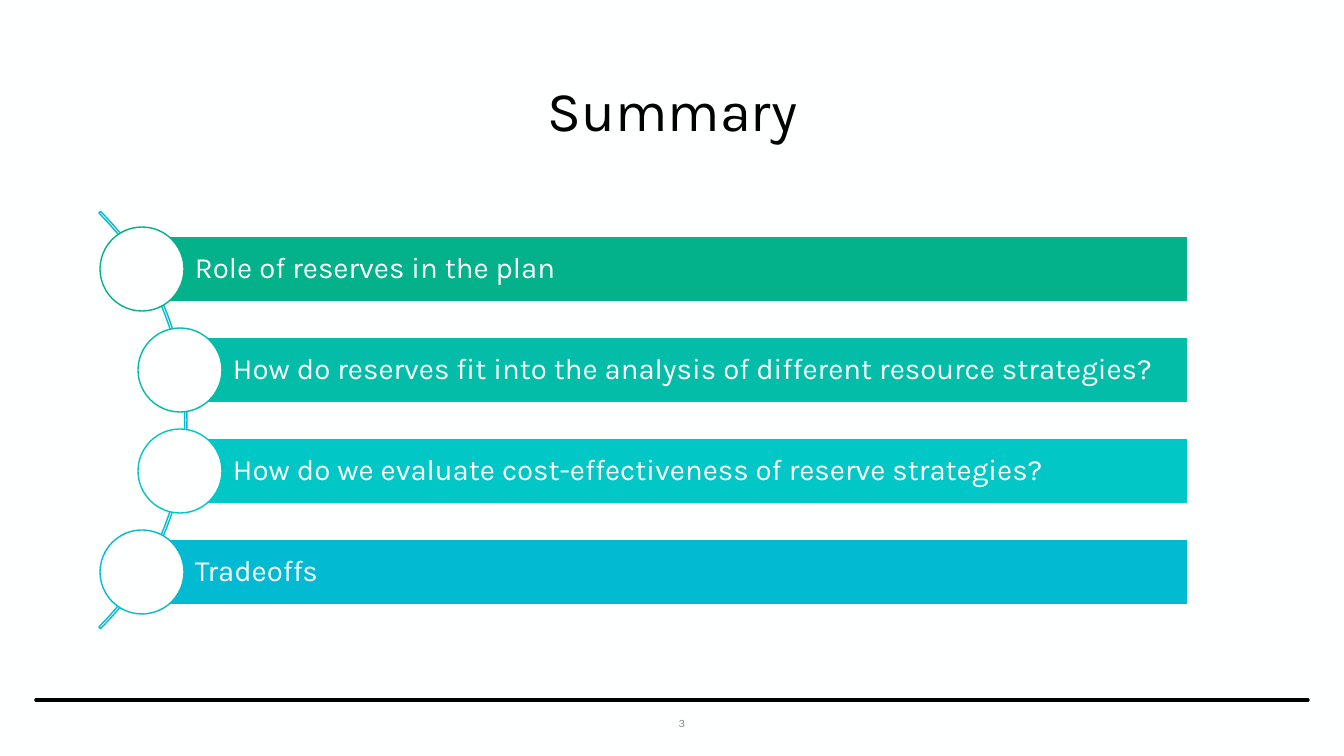
from dataclasses import dataclass

from lxml.etree import SubElement
from pptx import Presentation
from pptx.dml.color import RGBColor as Color
from pptx.enum.shapes import MSO_CONNECTOR as Link
from pptx.enum.shapes import MSO_SHAPE as Kind
from pptx.enum.text import MSO_ANCHOR as Anchor
from pptx.enum.text import PP_ALIGN as Align
from pptx.oxml.ns import qn
from pptx.util import Pt


@dataclass(frozen=True)
class Theme:
    font: str = "Karla"
    paper: str = "FEFFFF"
    ink: str = "000000"
    muted: str = "8C8C8C"
    arc: str = "02BAD2"
    title: int = 40
    body: int = 21
    small: int = 8
    thin: float = 1
    thick: float = 2.5


THEME = Theme()
SCALE = 914400 / 100.8
TOP, STEP, HIGH, RIGHT, DISC = 236, 101, 66, 1188, 84
TOPICS = (
    ("Role of reserves in the plan", "03B28B", 142),
    ("How do reserves fit into the analysis of different resource strategies?", "03BDA8", 180),
    ("How do we evaluate cost-effectiveness of reserve strategies?", "02C7C7", 180),
    ("Tradeoffs", "02BAD2", 142),
)


def px(*sizes):
    return [round(size * SCALE) for size in sizes]


def rgb(code):
    return Color.from_string(code)


def write(shape, text, size, color, align, pads, gap=0.9):
    frame = shape.text_frame
    frame.word_wrap = True
    frame.vertical_anchor = Anchor.MIDDLE
    (frame.margin_left, frame.margin_top,
     frame.margin_right, frame.margin_bottom) = px(*pads)
    para = frame.paragraphs[0]
    para.alignment = align
    para.line_spacing = gap
    run = para.add_run()
    run.text = text
    run.font.name = THEME.font
    run.font.size = Pt(size)
    run.font.color.rgb = rgb(color)


def add_form(slide, kind, box, fill, line):
    form = slide.shapes.add_shape(kind, *px(*box))
    form.shadow.inherit = False
    if fill:
        form.fill.solid()
        form.fill.fore_color.rgb = rgb(fill)
    else:
        form.fill.background()
    form.line.color.rgb = rgb(line)
    form.line.width = Pt(THEME.thin)
    return form


def add_title(slide, text):
    title = slide.shapes.title
    title.left, title.top, title.width, title.height = px(93, 40, 1159, 146)
    write(title, text, THEME.title, THEME.ink, Align.CENTER, (10, 5, 10, 5))


def add_rule(slide):
    rule = slide.shapes.add_connector(Link.STRAIGHT, *px(36, 700, 1308, 700))
    rule.line.color.rgb = rgb(THEME.ink)
    rule.line.width = Pt(THEME.thick)
    rule.line._get_or_add_ln().set("cap", "rnd")
    SubElement(rule._element.spPr, qn("a:effectLst"))


def add_arc(slide):
    arc = add_form(slide, Kind.BLOCK_ARC, (-403, 125, 590, 590), None, THEME.arc)
    for spot, value in enumerate((189, 27, 0.004)):
        arc.adjustments[spot] = value


def add_topic(slide, row, text, color, left):
    top = TOP + row * STEP
    bar = add_form(slide, Kind.RECTANGLE, (left, top, RIGHT - left, HIGH), color, THEME.paper)
    write(bar, text, THEME.body, THEME.paper, Align.LEFT, (53, 6, 6, 6))
    disc = (left - DISC // 2, top + (HIGH - DISC) // 2, DISC, DISC)
    add_form(slide, Kind.OVAL, disc, THEME.paper, color)


def add_number(slide, text):
    box = slide.shapes.add_textbox(*px(643, 708, 78, 30))
    write(box, text, THEME.small, THEME.muted, Align.CENTER, (10, 5, 10, 5), 1.0)


def main():
    deck = Presentation()
    deck.slide_width, deck.slide_height = px(1344, 756)
    slide = deck.slides.add_slide(deck.slide_layouts[5])
    slide.background.fill.solid()
    slide.background.fill.fore_color.rgb = rgb(THEME.paper)
    add_rule(slide)
    add_title(slide, "Summary")
    add_arc(slide)
    for row, topic in enumerate(TOPICS):
        add_topic(slide, row, *topic)
    add_number(slide, "3")
    deck.save("out.pptx")


if __name__ == "__main__":
    main()
